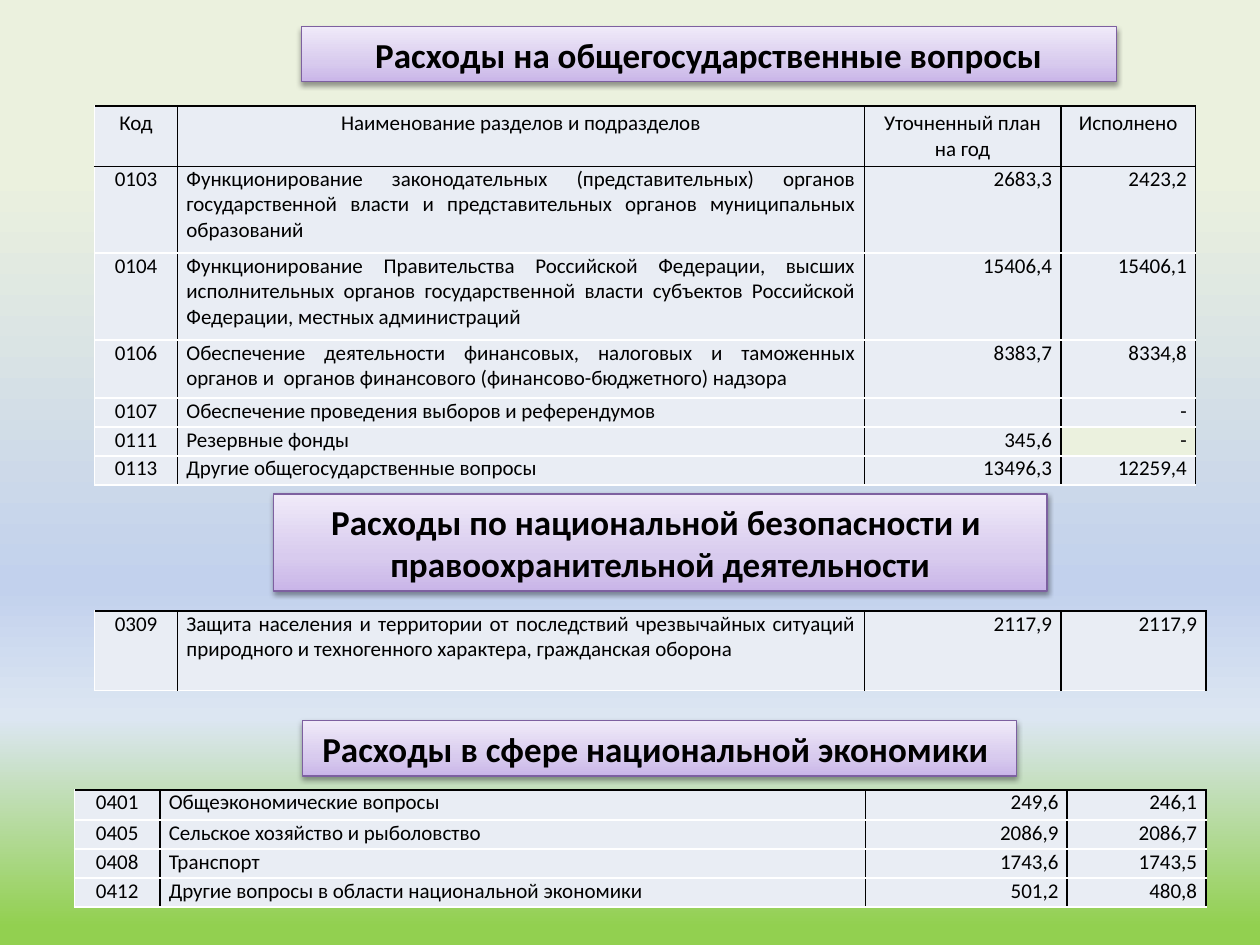
from lxml import etree
from pptx import Presentation
from pptx.dml.color import RGBColor
from pptx.enum.shapes import MSO_SHAPE
from pptx.enum.text import MSO_ANCHOR, MSO_AUTO_SIZE, PP_ALIGN
from pptx.oxml import parse_xml
from pptx.oxml.ns import nsdecls, qn
from pptx.util import Inches, Pt

RECT = MSO_SHAPE.RECTANGLE
TOP, MIDDLE = MSO_ANCHOR.TOP, MSO_ANCHOR.MIDDLE
FIXED = MSO_AUTO_SIZE.NONE
CENTER, JUSTIFY, RIGHT = PP_ALIGN.CENTER, PP_ALIGN.JUSTIFY, PP_ALIGN.RIGHT
TITLE_ONLY = 5

COLORS = {"text": "000000", "cell": "E9EDF4", "highlight": "EBF1DE",
          "rule": "000000", "light_rule": "FFFFFF", "banner_line": "7D60A0"}
SKY = [(2, "92D050"), (24, "DCE6F2"), (38, "C2D1ED"), (82, "EBF1DE")]
LILAC = [(0, "C9B5E8"), (35, "D8CBEE"), (100, "F0EAF9")]

GENERAL_ROWS = [
    ("Код", "Наименование разделов и подразделов", "Уточненный план на год",
     "Исполнено"),
    ("0103", "Функционирование законодательных (представительных) органов "
     "государственной власти и представительных органов муниципальных "
     "образований", "2683,3", "2423,2"),
    ("0104", "Функционирование Правительства Российской Федерации, высших "
     "исполнительных органов государственной власти субъектов Российской "
     "Федерации, местных администраций", "15406,4", "15406,1"),
    ("0106", "Обеспечение деятельности финансовых, налоговых и таможенных "
     "органов и  органов финансового (финансово-бюджетного) надзора",
     "8383,7", "8334,8"),
    ("0107", "Обеспечение проведения выборов и референдумов", "", "-"),
    ("0111", "Резервные фонды", "345,6", "-"),
    ("0113", "Другие общегосударственные вопросы", "13496,3", "12259,4"),
]
SECURITY_ROWS = [
    ("0309", "Защита населения и территории от последствий чрезвычайных "
     "ситуаций природного и техногенного характера, гражданская оборона",
     "2117,9", "2117,9"),
]
ECONOMY_ROWS = [
    ("0401", "Общеэкономические вопросы", "249,6", "246,1"),
    ("0405", "Сельское хозяйство и рыболовство", "2086,9", "2086,7"),
    ("0408", "Транспорт", "1743,6", "1743,5"),
    ("0412", "Другие вопросы в области национальной экономики", "501,2",
     "480,8"),
]


class BudgetSlide:
    """Style and current slide; lengths are steps of a 100 by 75 grid."""

    font = "Calibri"
    step = Inches(0.1)
    aligns = (CENTER, JUSTIFY, RIGHT, RIGHT)

    def __init__(self, prs):
        self.slide = prs.slides.add_slide(prs.slide_layouts[TITLE_ONLY])
        self.gradient(self.slide.background.fill, SKY)

    def grid(self, *lengths):
        return [round(n * self.step) for n in lengths]

    def gradient(self, fill, stops):
        """Fill from bottom to top with (percent, colour) stops."""
        fill.gradient()
        fill.gradient_angle = 90
        gs_lst = fill._fill._gradFill.find(qn("a:gsLst"))
        for gs in list(gs_lst):
            gs_lst.remove(gs)
        for percent, color in stops:
            gs = etree.SubElement(gs_lst, qn("a:gs"), pos=str(percent * 1000))
            etree.SubElement(gs, qn("a:srgbClr"), val=color)

    def format_text(self, p, size, align, bold=False):
        p.alignment = align
        p.font.name, p.font.size, p.font.bold = self.font, Pt(size), bold
        p.font.color.rgb = RGBColor.from_string(COLORS["text"])

    def banner(self, text, box, is_title=False):
        if is_title:
            sp = self.slide.shapes.title
            sp.left, sp.top, sp.width, sp.height = self.grid(*box)
        else:
            sp = self.slide.shapes.add_shape(RECT, *self.grid(*box))
        self.gradient(sp.fill, LILAC)
        sp.line.color.rgb = RGBColor.from_string(COLORS["banner_line"])
        sp.line.width = Pt(0.75)
        self.shadow(sp)
        tf = sp.text_frame
        tf.word_wrap, tf.auto_size = True, FIXED
        tf.vertical_anchor = MIDDLE
        tf.text = text
        for p in tf.paragraphs:
            self.format_text(p, 20, CENTER, bold=True)

    def shadow(self, sp):
        sp.shadow.inherit = False
        effects = sp._element.spPr.find(qn("a:effectLst"))
        effects.append(parse_xml(
            f'<a:outerShdw {nsdecls("a")} blurRad="{Pt(3.1)}" dist="{Pt(1.6)}" '
            'dir="5400000" rotWithShape="0"><a:srgbClr val="000000">'
            '<a:alpha val="38000"/></a:srgbClr></a:outerShdw>'))

    def borders(self, cell, **sides):
        tc_pr = cell._tc.get_or_add_tcPr()
        for side, color in sides.items():
            ln = etree.SubElement(tc_pr, qn(f"a:ln{side}"), w=str(Pt(1)))
            fill = etree.SubElement(ln, qn("a:solidFill"))
            etree.SubElement(fill, qn("a:srgbClr"), val=COLORS[color])

    def table(self, rows, at, widths, heights, header=False, highlight=None):
        box = self.grid(*at, sum(widths), sum(heights))
        frame = self.slide.shapes.add_table(len(rows), len(widths), *box)
        table = frame.table
        table.first_row = table.horz_banding = False
        for col, width in zip(table.columns, self.grid(*widths)):
            col.width = width
        for row, height in zip(table.rows, self.grid(*heights)):
            row.height = height
        for r, texts in enumerate(rows):
            is_head = header and r == 0
            dark_top = r == 0 or (header and r == 1)
            for c, text in enumerate(texts):
                cell = table.cell(r, c)
                self.borders(cell, L="rule" if c else "light_rule", R="rule",
                             T="rule" if dark_top else "light_rule",
                             B="rule" if is_head else "light_rule")
                color = "highlight" if (r, c) == highlight else "cell"
                cell.fill.solid()
                cell.fill.fore_color.rgb = RGBColor.from_string(COLORS[color])
                cell.margin_left = cell.margin_right = Inches(0.07)
                cell.margin_top = Inches(0.04) if is_head else 0
                cell.margin_bottom = 0
                cell.vertical_anchor = TOP
                cell.text = text
                p = cell.text_frame.paragraphs[0]
                self.format_text(p, 12, CENTER if is_head else self.aligns[c])
                if not text:
                    etree.SubElement(p._p, qn("a:endParaRPr"), sz="1200")


def main():
    prs = Presentation()
    prs.slide_width, prs.slide_height = Inches(10), Inches(7.5)
    s = BudgetSlide(prs)
    s.banner("Расходы на общегосударственные вопросы",
             (23.9, 2.1, 64.7, 4.4), is_title=True)
    s.table(GENERAL_ROWS, (7.5, 8.4), (6.6, 54.5, 15.6, 10.7),
            (4.8, 6.9, 6.9, 4.6, 2.3, 2.3, 2.3), header=True, highlight=(5, 3))
    s.banner("Расходы по национальной безопасности и \n"
             "правоохранительной деятельности", (21.7, 39.2, 61.4, 7.7))
    s.table(SECURITY_ROWS, (7.5, 48.5), (6.6, 54.5, 15.6, 11.5), (6.3,))
    s.banner("Расходы в сфере национальной экономики ", (24, 57.2, 56.7, 4.4))
    s.table(ECONOMY_ROWS, (5.9, 62.7), (6.8, 56, 16, 11), (2.4, 2.3, 2.3, 2.3))
    prs.save("out.pptx")


if __name__ == "__main__":
    main()
